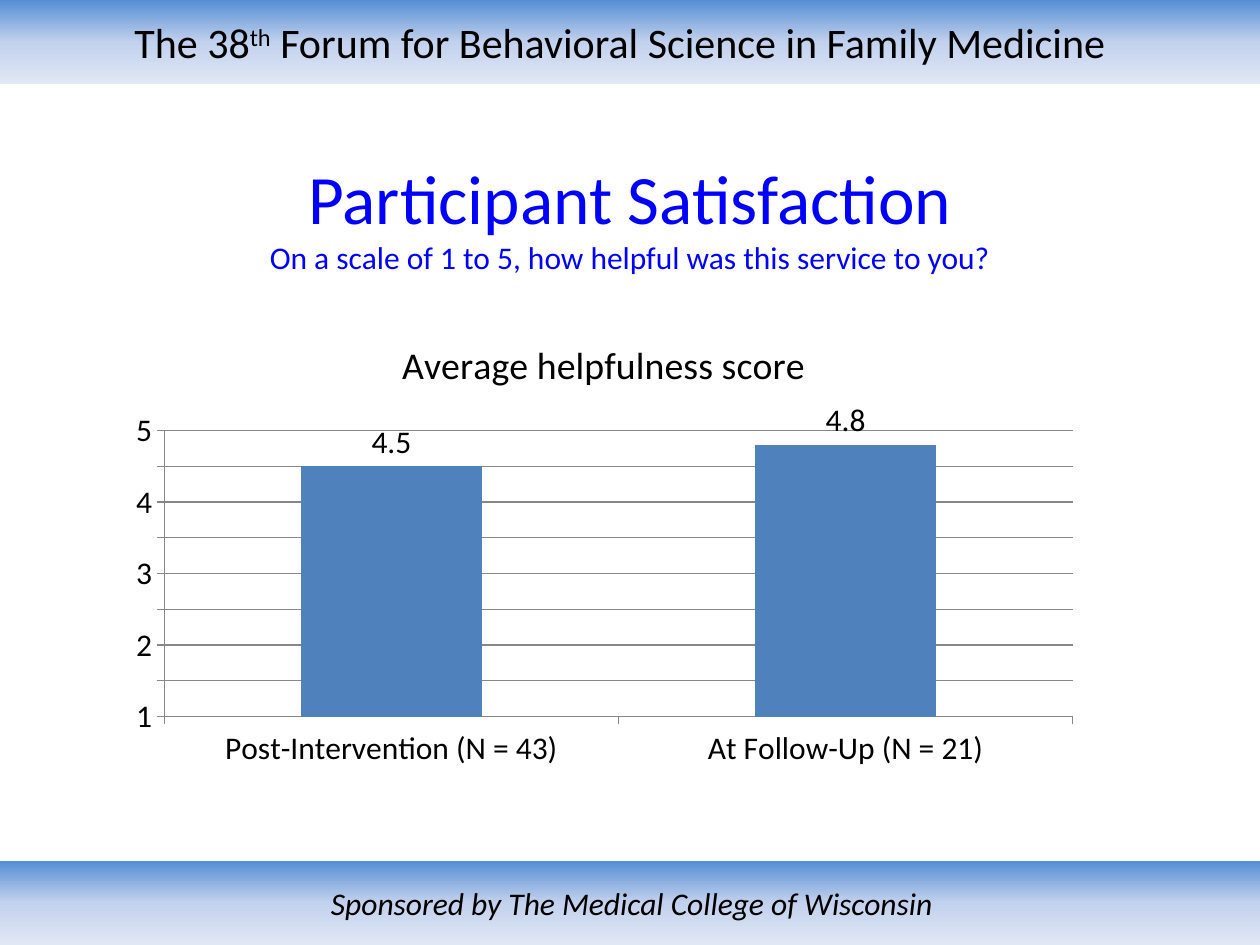
"""Build the participant satisfaction slide with its helpfulness chart."""
from copy import deepcopy

from lxml import etree
from pptx import Presentation
from pptx import util as u
from pptx.chart.data import CategoryChartData
from pptx.dml.color import RGBColor
from pptx.enum import chart as ch, shapes, text
from pptx.oxml.ns import qn

BLACK = RGBColor(0, 0, 0)
BLUE = RGBColor(0, 0, 255)
BAR = RGBColor(0x4F, 0x81, 0xBD)
GRID = RGBColor(0x87, 0x87, 0x87)
BAND = [(0, RGBColor(0x55, 0x8E, 0xD5)), (0.5, RGBColor(0xC2, 0xD1, 0xED)),
        (1, RGBColor(0xE1, 0xE8, 0xF5))]
FONT = "Calibri"


def style(font, size, color):
    font.name, font.size = FONT, u.Pt(size)
    font.color.rgb = color


def add_band(top, width, size, runs):
    sp = s.shapes.add_shape(shapes.MSO_SHAPE.RECTANGLE, 0, u.Cm(top), u.Cm(width), u.Cm(1.7))
    sp.shadow.inherit = False
    sp.line.fill.background()
    sp.fill.gradient()
    sp.fill.gradient_angle = 270
    stops = sp._element.spPr.find(".//" + qn("a:gsLst"))
    stops.append(deepcopy(stops[0]))
    for stop, (position, color) in zip(sp.fill.gradient_stops, BAND):
        stop.position = position
        stop.color.rgb = color
    tf = sp.text_frame
    tf.word_wrap = True
    tf.vertical_anchor = text.MSO_ANCHOR.MIDDLE
    p = tf.paragraphs[0]
    p.alignment = text.PP_ALIGN.CENTER
    for words in runs:
        p.add_run().text = words
    style(p.font, size, BLACK)
    return tf


prs = Presentation()
prs.slide_width, prs.slide_height = u.Cm(25.4), u.Cm(19.05)
s = prs.slides.add_slide(prs.slide_layouts[5])

tf = add_band(0, 25.4, 24, ["The 38", "th", " Forum for Behavioral Science in Family Medicine"])
tf.margin_right = u.Cm(0.65)
tf.paragraphs[0].runs[1].font._element.set("baseline", "30000")
tf = add_band(17.35, 25.48, 18, ["Sponsored by The Medical College of Wisconsin"])
tf.paragraphs[0].font.italic = True

title = s.shapes.title
title.left, title.top, title.width, title.height = u.Cm(1.27), u.Cm(3.39), u.Cm(22.86), u.Cm(1.9)
tf = title.text_frame
tf.auto_size = text.MSO_AUTO_SIZE.NONE
tf.vertical_anchor = text.MSO_ANCHOR.MIDDLE
p = tf.paragraphs[0]
p.alignment = text.PP_ALIGN.CENTER
r = p.add_run()
r.text = "Participant Satisfaction"
style(r.font, 39.6, BLUE)
p.add_line_break()
r = p.add_run()
r.text = "On a scale of 1 to 5, how helpful was this service to you?"
style(r.font, 18, BLUE)

data = CategoryChartData()
data.categories = ["Post-Intervention (N = 43)", "At Follow-Up (N = 21)"]
data.add_series("Average helpfulness score", (4.5, 4.8))
chart = s.shapes.add_chart(ch.XL_CHART_TYPE.COLUMN_CLUSTERED, u.Cm(2.33), u.Cm(6.35),
                           u.Cm(19.69), u.Cm(9.31), data).chart
style(chart.font, 18, BLACK)
chart.has_legend = False
chart.has_title = True
p = chart.chart_title.text_frame.paragraphs[0]
p.add_run().text = "Average helpfulness score"
style(p.font, 21.6, BLACK)
p.font.bold = False

axis = chart.value_axis
axis.minimum_scale, axis.maximum_scale, axis.major_unit = 1, 5, 0.5
axis.has_major_gridlines = True
for line in (axis.major_gridlines.format.line, axis.format.line, chart.category_axis.format.line):
    line.color.rgb = GRID
    line.width = u.Pt(0.75)
for axis in (chart.value_axis, chart.category_axis):
    axis.major_tick_mark = ch.XL_TICK_MARK.OUTSIDE

plot = chart.plots[0]
plot.gap_width = 150
plot.vary_by_categories = False
series = plot.series[0]
series.format.fill.solid()
series.format.fill.fore_color.rgb = BAR
labels = series.data_labels
labels.show_value = True
labels.position = ch.XL_LABEL_POSITION.OUTSIDE_END
style(labels.font, 18, BLACK)

area = chart._chartSpace.find(".//" + qn("c:plotArea"))
for old in area.findall(qn("c:layout")):
    area.remove(old)
layout = etree.Element(qn("c:layout"))
manual = etree.SubElement(layout, qn("c:manualLayout"))
for tag, value in (("layoutTarget", "inner"), ("xMode", "edge"), ("yMode", "edge"),
                   ("x", "0.05"), ("y", "0.25"), ("w", "0.93"), ("h", "0.62")):
    etree.SubElement(manual, qn("c:" + tag)).set("val", value)
area.insert(0, layout)

prs.save("out.pptx")
